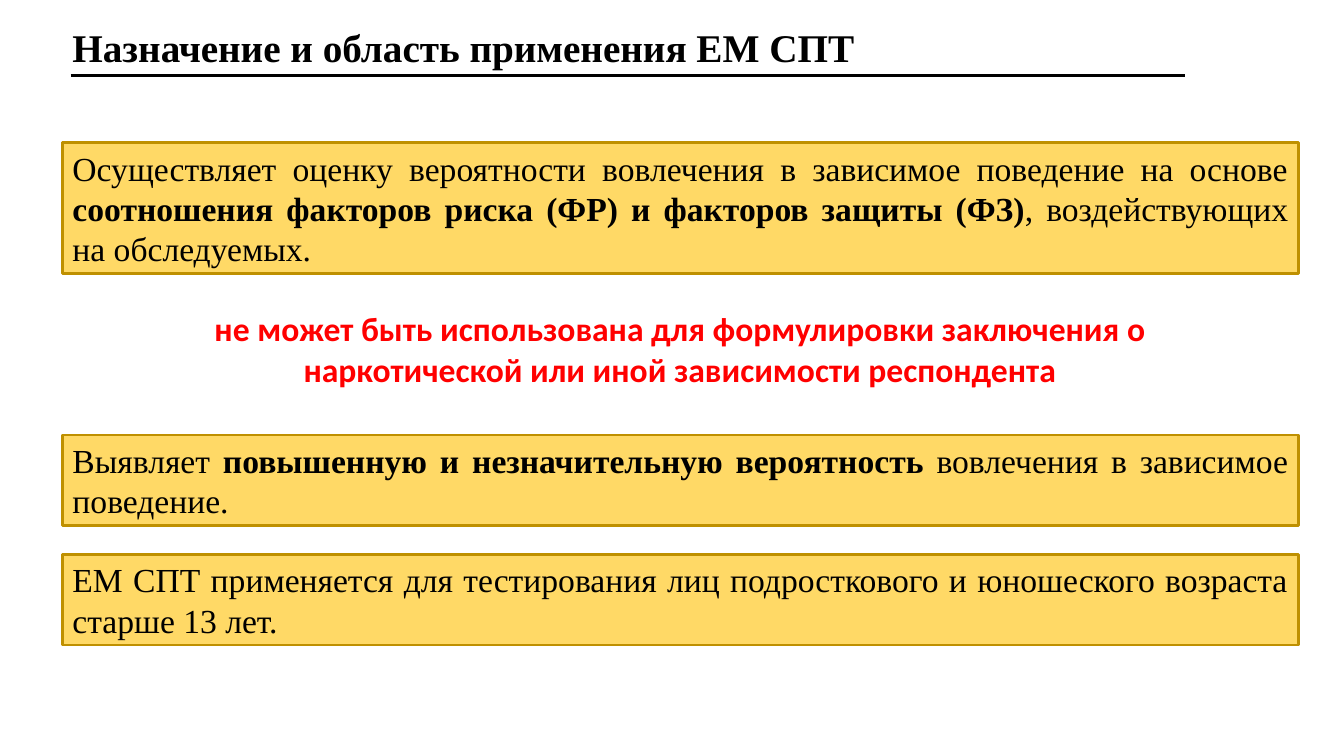
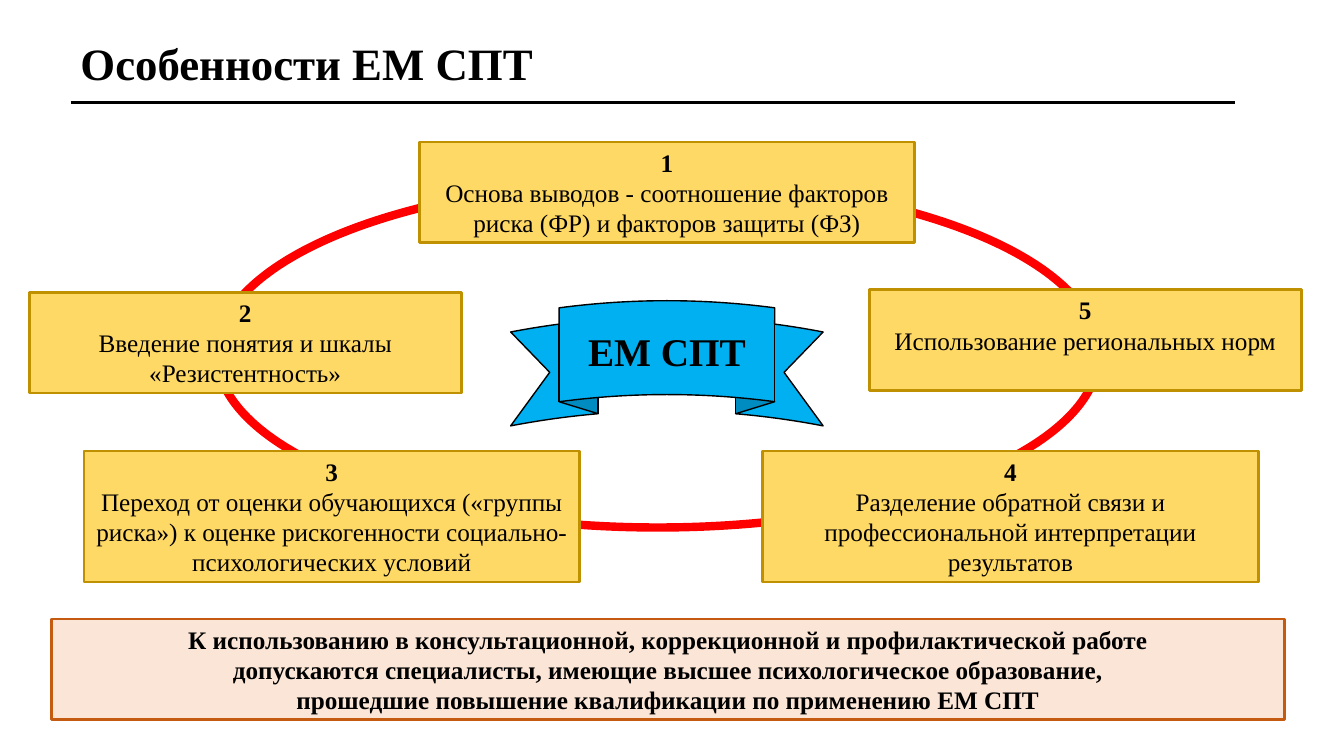
"""Two slides on the purpose and the features of a test method."""
from lxml import etree
from pptx import Presentation
from pptx.dml.color import RGBColor
from pptx.enum.shapes import MSO_CONNECTOR, MSO_SHAPE
from pptx.enum.text import MSO_ANCHOR, PP_ALIGN
from pptx.oxml.ns import qn
from pptx.util import Inches, Pt

BLACK = RGBColor(0x00, 0x00, 0x00)
RED = RGBColor(0xFF, 0x00, 0x00)
GOLD = RGBColor(0xFF, 0xD9, 0x66)
OCHRE = RGBColor(0xBF, 0x90, 0x00)
PEACH = RGBColor(0xFB, 0xE5, 0xD6)
RUST = RGBColor(0xC5, 0x5A, 0x11)
BLUE = RGBColor(0x00, 0xB0, 0xF0)
RECT, OVAL = MSO_SHAPE.RECTANGLE, MSO_SHAPE.OVAL
RIBBON = MSO_SHAPE.CURVED_UP_RIBBON
STRAIGHT = MSO_CONNECTOR.STRAIGHT
LEFT, CENTER, JUSTIFY = PP_ALIGN.LEFT, PP_ALIGN.CENTER, PP_ALIGN.JUSTIFY
TOP, MIDDLE = MSO_ANCHOR.TOP, MSO_ANCHOR.MIDDLE
COLS, ROWS = 160, 90
SERIF, SANS = "Times New Roman", "Calibri"


def cell(n):
    return Inches(n / 12)


def tall(lines, size):
    return 1.2 + lines * size / 5


def write(shape, text, size=18, font=SERIF, color=BLACK, bold=False,
          align=CENTER, anchor=TOP, wrap=True):
    frame = shape.text_frame
    frame.word_wrap = wrap
    frame.vertical_anchor = anchor
    for i, line in enumerate(text.split("\n")):
        para = frame.paragraphs[0] if i == 0 else frame.add_paragraph()
        para.alignment = align
        for j, part in enumerate(line.split("*")):
            if part:
                run = para.add_run()
                run.text = part
                run.font.name = font
                run.font.size = Pt(size)
                run.font.bold = bold or j % 2 == 1
                run.font.color.rgb = color


class Deck:
    def __init__(self):
        self.file = Presentation()
        self.file.slide_width = cell(COLS)
        self.file.slide_height = cell(ROWS)

    def start(self):
        self.slide = self.file.slides.add_slide(self.file.slide_layouts[6])

    def label(self, text, x, y, w, h, **style):
        area = self.slide.shapes.add_textbox(*map(cell, (x, y, w, h)))
        write(area, text, **style)

    def title(self, text, x, y, w, size, end, base):
        self.label(text, x, y, w, tall(1, size), size=size, bold=True,
                   align=LEFT, wrap=False)
        rule = self.slide.shapes.add_connector(
            STRAIGHT, *map(cell, (8.4, base, end, base)))
        rule.line.color.rgb = BLACK
        rule.line.width = Pt(2)
        etree.SubElement(rule.element.spPr, qn("a:effectLst"))

    def shape(self, kind, x, y, w, h, fill, edge, width):
        shape = self.slide.shapes.add_shape(kind, *map(cell, (x, y, w, h)))
        shape.shadow.inherit = False
        if fill is None:
            shape.fill.background()
        else:
            shape.fill.solid()
            shape.fill.fore_color.rgb = fill
        shape.line.color.rgb = edge
        shape.line.width = Pt(width)
        return shape

    def box(self, text, x, y, w, lines, size=18, fill=GOLD, edge=OCHRE,
            **style):
        shape = self.shape(RECT, x, y, w, tall(lines, size), fill, edge, 2)
        write(shape, text, size=size, **style)

    def ring(self, x, y, w, h):
        self.shape(OVAL, x, y, w, h, None, RED, 6)

    def ribbon(self, text, x, y, w, h):
        shape = self.shape(RIBBON, x, y, w, h, BLUE, BLACK, 1)
        for i, share in enumerate((0.25, 0.69, 0.12)):
            shape.adjustments[i] = share
        write(shape, text, size=28, bold=True, anchor=MIDDLE)


def purpose(deck):
    deck.start()
    deck.title("Назначение и область применения ЕМ СПТ",
               7.45, 2.2, 96.5, 28, 141.1, 9)
    for y, lines, text in (
        (17, 3, "Осуществляет оценку вероятности вовлечения в зависимое "
                "поведение на основе *соотношения факторов риска (ФР) и "
                "факторов защиты (ФЗ)*, воздействующих на обследуемых."),
        (51.8, 2, "Выявляет *повышенную и незначительную вероятность* "
                  "вовлечения в зависимое поведение."),
        (66, 2, "ЕМ СПТ применяется для тестирования лиц подросткового и "
                "юношеского возраста старше 13 лет."),
    ):
        deck.box(text, 7.45, y, 147.1, lines, size=24, align=JUSTIFY)
    deck.label("не может быть использована для формулировки заключения о "
               "наркотической или иной зависимости респондента",
               22.1, 36.1, 117.7, tall(2, 24), size=24, font=SANS,
               color=RED, bold=True)


def features(deck):
    deck.start()
    deck.title("Особенности ЕМ СПТ", 8.4, 3.7, 56.9, 32, 147, 12.2)
    deck.ring(25.8, 21.5, 105, 41.3)
    deck.ribbon("ЕМ СПТ", 60.8, 35.8, 37.2, 14.9)
    deck.box("К использованию в консультационной, коррекционной и "
             "профилактической работе\n"
             "допускаются специалисты, имеющие высшее психологическое "
             "образование,\n"
             "прошедшие повышение квалификации по применению ЕМ СПТ",
             6.1, 73.7, 146.8, 3, fill=PEACH, edge=RUST, bold=True)
    wide, slim = 59, 51.4
    for i, (x, y, w, lines, text) in enumerate((
        (49.9, 16.9, wide, 3, "Основа выводов - соотношение факторов риска "
                              "(ФР) и факторов защиты (ФЗ)"),
        (3.5, 34.8, slim, 3, "Введение понятия и шкалы «Резистентность»"),
        (10, 53.7, wide, 4, "Переход от оценки обучающихся («группы риска») "
                            "к оценке рискогенности "
                            "социально-психологических условий"),
        (90.8, 53.7, wide, 4, "Разделение обратной связи и "
                              "профессиональной интерпретации результатов"),
        (103.5, 34.5, slim, 3, "Использование региональных норм"),
    ), 1):
        deck.box(f"*{i}*\n{text}", x, y, w, lines)


def main():
    deck = Deck()
    purpose(deck)
    features(deck)
    deck.file.save("out.pptx")


if __name__ == "__main__":
    main()
